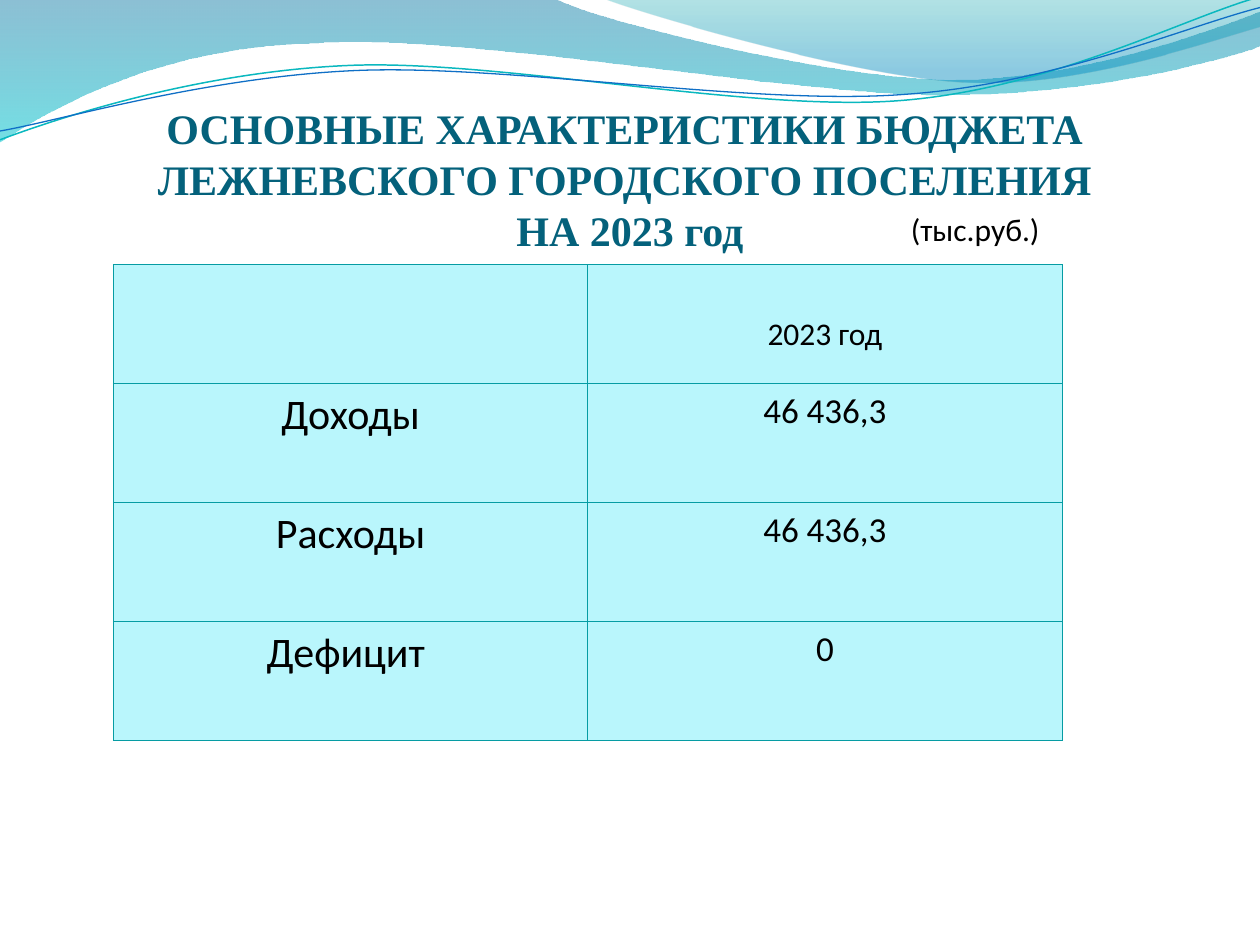
from lxml.etree import SubElement
from pptx import Presentation
from pptx.dml.color import RGBColor
from pptx.enum.text import MSO_ANCHOR, MSO_AUTO_SIZE, PP_ALIGN
from pptx.oxml.ns import qn
from pptx.util import Inches, Pt

UNITS_PER_INCH = 100


def color(hex_string):
    return RGBColor.from_string(hex_string)


def write(frame, text, size=18, font="Calibri", fill="000000", bold=False,
          align=PP_ALIGN.LEFT, spacing=None):
    paragraph = frame.paragraphs[0]
    paragraph.alignment = align
    if spacing:
        paragraph.line_spacing = Pt(spacing)
    for number, line in enumerate(text.split("\n")):
        if number:
            paragraph.add_line_break()
        run = paragraph.add_run()
        run.text = line
        run.font.size = Pt(size)
        run.font.name = font
        run.font.bold = bold
        run.font.color.rgb = color(fill)


class BudgetSlide:
    ink = "04617B"
    cell_fill = "B9F6FC"
    border = "069CA3"

    def __init__(self, presentation):
        self.slide = presentation.slides.add_slide(presentation.slide_layouts[5])
        self.shapes = self.slide.shapes

    def wave(self, *segments, gradient=None, line=None):
        points = [(round(x * UNITS_PER_INCH), round(y * UNITS_PER_INCH))
                  for segment in segments for x, y in zip(segment[::2], segment[1::2])]
        builder = self.shapes.build_freeform(*points[0], scale=Inches(1) / UNITS_PER_INCH)
        builder.add_line_segments(points[1:], close=gradient is not None)
        shape = builder.convert_to_shape()
        self.bend(shape, segments[1:])
        shape.shadow.inherit = False
        if gradient:
            shape.line.fill.background()
            self.shade(shape, gradient)
        else:
            shape.fill.background()
            shape.line.color.rgb = color(line[0])
            shape.line.width = Pt(line[1])

    def bend(self, shape, segments):
        steps = iter(list(shape.element.spPr.iter(qn("a:lnTo"))))
        for segment in segments:
            first = next(steps)
            if len(segment) == 6:
                first.tag = qn("a:cubicBezTo")
                for step in (next(steps), next(steps)):
                    first.append(step[0])
                    step.getparent().remove(step)

    def shade(self, shape, gradient):
        shape.fill.gradient()
        shape.fill.gradient_angle = 270
        for stop, (position, tint, _) in zip(shape.fill.gradient_stops, gradient):
            stop.position = position
            stop.color.rgb = color(tint)
        tints = shape.element.spPr.iter(qn("a:srgbClr"))
        for tint, (_, _, opacity) in zip(tints, gradient):
            SubElement(tint, qn("a:alpha"), val=str(opacity * 1000))

    def title(self, text, left, top, width, height):
        heading = self.shapes.title
        self.shapes.element.append(heading.element)
        heading.left, heading.top = Inches(left), Inches(top)
        heading.width, heading.height = Inches(width), Inches(height)
        frame = heading.text_frame
        frame.auto_size = MSO_AUTO_SIZE.NONE
        frame.vertical_anchor = MSO_ANCHOR.BOTTOM
        frame.margin_left = frame.margin_right = frame.margin_bottom = 0
        frame.margin_top = Inches(0.05)
        write(frame, text, size=24, font="Times New Roman", fill=self.ink,
              bold=True, align=PP_ALIGN.CENTER, spacing=29)

    def label(self, text, left, top, width, height):
        box = self.shapes.add_textbox(Inches(left), Inches(top), Inches(width), Inches(height))
        box.text_frame.word_wrap = True
        box.text_frame.auto_size = MSO_AUTO_SIZE.SHAPE_TO_FIT_TEXT
        write(box.text_frame, text)

    def outline(self, cell):
        properties = cell._tc.get_or_add_tcPr()
        for side in ("a:lnL", "a:lnR", "a:lnT", "a:lnB"):
            edge = SubElement(properties, qn(side), w=str(Pt(0.75)))
            solid = SubElement(edge, qn("a:solidFill"))
            SubElement(solid, qn("a:srgbClr"), val=self.border)

    def table(self, rows, left, top, width, height):
        table = self.shapes.add_table(len(rows), len(rows[0]), Inches(left), Inches(top),
                                      Inches(width), Inches(height)).table
        table.first_row = table.horz_banding = False
        for row_number, row in enumerate(rows):
            for column_number, text in enumerate(row):
                cell = table.cell(row_number, column_number)
                self.outline(cell)
                cell.fill.solid()
                cell.fill.fore_color.rgb = color(self.cell_fill)
                if row_number == 0:
                    cell.margin_top = Inches(0.4)
                    size = 18
                else:
                    size = 20 if column_number else 24
                if text:
                    write(cell.text_frame, text, size=size, align=PP_ALIGN.CENTER)


def main():
    presentation = Presentation()
    presentation.slide_width, presentation.slide_height = Inches(10), Inches(7.5)
    budget = BudgetSlide(presentation)
    budget.wave((0, 0), (4.4, -0.01), (4.76, 0.17, 6.64, 0.63, 7.58, 0.63),
                (8.53, 0.63, 9.58, 0.26, 10, 0.09), (10.01, 0.36),
                (9.83, 0.44, 8.7, 0.76, 7.46, 0.75), (6.22, 0.75, 3.82, 0.28, 2.57, 0.34),
                (1.29, 0.36, 0.46, 0.83, -0.01, 1.13),
                gradient=[(0, "0074A1", 45), (1, "00C6CF", 55)])
    budget.wave((4.79, -0.01), (5.09, 0.11, 6.82, 0.62, 7.69, 0.65),
                (8.56, 0.69, 9.61, 0.32, 10, 0.21), (10, 0),
                gradient=[(0, "00A1A9", 30), (0.8, "008BBF", 45)])
    budget.wave((0, 1.11), (0.48, 0.93, 1.58, 0.57, 2.77, 0.52),
                (3.95, 0.47, 5.93, 0.89, 7.13, 0.8), (8.33, 0.71, 9.38, 0.15, 9.98, -0.02),
                line=("0AB8BF", 0.85))
    budget.wave((0, 1.04), (0.47, 0.96, 1.64, 0.61, 2.83, 0.56),
                (4.03, 0.51, 5.97, 0.84, 7.17, 0.75), (8.36, 0.67, 9.41, 0.21, 10, 0.06),
                line=("0F6FC6", 0.75))
    budget.title("ОСНОВНЫЕ ХАРАКТЕРИСТИКИ БЮДЖЕТА \nЛЕЖНЕВСКОГО ГОРОДСКОГО ПОСЕЛЕНИЯ \n"
                 "НА 2023 год", 0.5, 0.77, 9, 1.25)
    budget.table([("", "2023 год"), ("Доходы", "46 436,3"), ("Расходы", "46 436,3"),
                  ("Дефицит ", "0")], 0.9, 2.1, 7.53, 3.78)
    budget.label("(тыс.руб.)", 7.13, 1.62, 1.81, 0.4)
    presentation.save("out.pptx")


if __name__ == "__main__":
    main()
